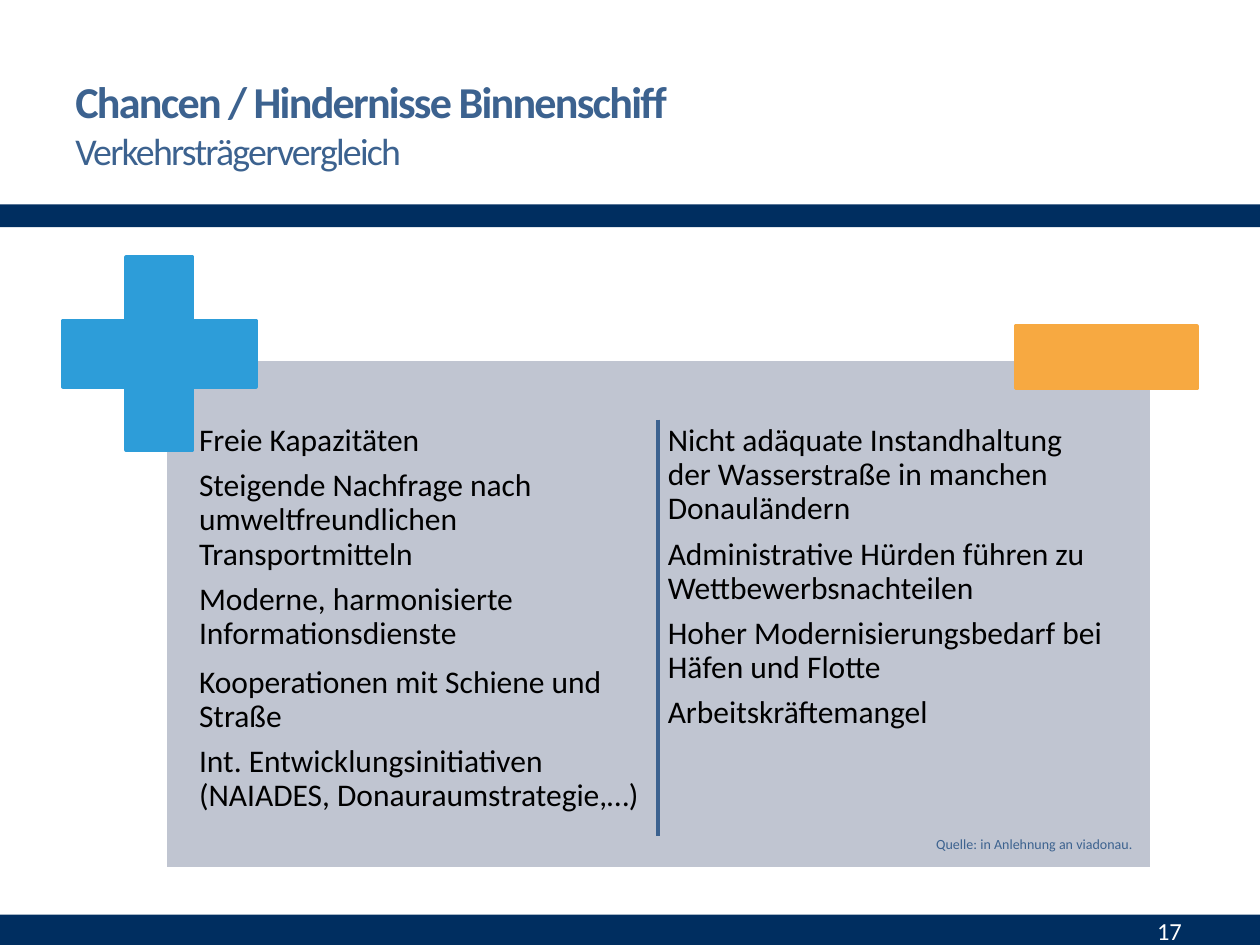
from lxml import etree
from pptx import Presentation
from pptx.dml.color import RGBColor
from pptx.enum.shapes import MSO_CONNECTOR, MSO_SHAPE as SHAPE
from pptx.enum.text import MSO_ANCHOR as ANCHOR, PP_ALIGN as ALIGN
from pptx.oxml.ns import qn
from pptx.util import Pt

COLORS = {"navy": "002E60", "steel": "3C628F", "panel": "C0C5D1", "plus": "2D9DD9",
          "minus": "F7A941", "white": "FFFFFF", "black": "000000"}
LINE_WIDTH = Pt(2.08)

deck = Presentation()
deck.slide_width, deck.slide_height = Pt(720), Pt(540)
page = deck.slides.add_slide(deck.slide_layouts[6])


def add_block(kind, left, top, width, height, fill, line=None):
    shape = page.shapes.add_shape(kind, Pt(left), Pt(top), Pt(width), Pt(height))
    shape.shadow.inherit = False
    shape.fill.solid()
    shape.fill.fore_color.rgb = RGBColor.from_string(COLORS[fill])
    if line:
        shape.line.color.rgb = RGBColor.from_string(COLORS[line])
        shape.line.width = LINE_WIDTH
    else:
        shape.line.fill.background()
    return shape


def add_text(left, top, width, height, text, size, color,
             align=ALIGN.LEFT, anchor=ANCHOR.TOP):
    box = page.shapes.add_textbox(Pt(left), Pt(top), Pt(width), Pt(height))
    frame = box.text_frame
    frame.word_wrap = True
    frame.vertical_anchor = anchor
    frame.text = text
    for para in frame.paragraphs:
        para.alignment = align
        for span in para.runs:
            span.font.name = "Calibri"
            span.font.size = Pt(size)
            span.font.color.rgb = RGBColor.from_string(COLORS[color])
    return frame


# Header and footer bars
add_block(SHAPE.RECTANGLE, 0, 522.7, 720, 17.3, "navy")
add_block(SHAPE.RECTANGLE, 0, 116.8, 720, 13, "navy")

# Title and subtitle
title = add_text(36, 31.7, 375, 77.8, "Chancen / Hindernisse Binnenschiff\vVerkehrsträgervergleich",
                 25.2, "steel", anchor=ANCHOR.MIDDLE)
heading, subtitle = title.paragraphs[0].runs
heading.font.bold = True
subtitle.font.size = Pt(21.6)
for span in (heading, subtitle):
    span.font._element.set("spc", "-100")

# Panel with the two columns
add_block(SHAPE.RECTANGLE, 94.5, 205.5, 563.5, 291, "panel", "white")
columns = {
    110.9: ["Freie Kapazitäten",
            "Steigende Nachfrage nach umweltfreundlichen Transportmitteln",
            "Moderne, harmonisierte Informationsdienste",
            "Kooperationen mit Schiene und Straße",
            "Int. Entwicklungsinitiativen (NAIADES, Donauraumstrategie,…)"],
    378.7: ["Nicht adäquate Instandhaltung\vder Wasserstraße in manchen Donauländern",
            "Administrative Hürden führen zu Wettbewerbsnachteilen",
            "Hoher Modernisierungsbedarf bei Häfen und Flotte",
            "Arbeitskräftemangel"],
}
for left, points in columns.items():
    column = add_text(left, 239.8, 262.1, 249, "\n".join(points), 18, "black")
    column.margin_left = column.margin_right = Pt(2.9)
    column.margin_top = column.margin_bottom = Pt(2.9)
    for para in column.paragraphs:
        para.line_spacing = 0.9
        # The cooperation point stands a little further off
        wide_gap = para.text.startswith("Moderne")
        para.space_after = Pt(8.6 if wide_gap else 6.3)

# Plus and minus signs
plus = add_block(SHAPE.CROSS, 36, 147, 110.2, 110.2, "plus", "plus")
plus.adjustments[0] = 0.328
add_block(SHAPE.RECTANGLE, 580.3, 186.5, 103.7, 35.5, "minus", "minus")

# Divider between the columns
divider = page.shapes.add_connector(MSO_CONNECTOR.STRAIGHT, Pt(376.1), Pt(239.8), Pt(376.1), Pt(478))
divider.line.color.rgb = RGBColor.from_string(COLORS["steel"])
divider.line.width = LINE_WIDTH
etree.SubElement(divider._element.spPr, qn("a:effectLst"))

# Page number and source
add_text(598.3, 519.1, 84.2, 25.9, "17", 14, "white", ALIGN.RIGHT, ANCHOR.MIDDLE)
add_text(478.8, 473.8, 175.7, 17.3, "Quelle: in Anlehnung an viadonau.", 8, "steel", ALIGN.RIGHT)

deck.save("out.pptx")
